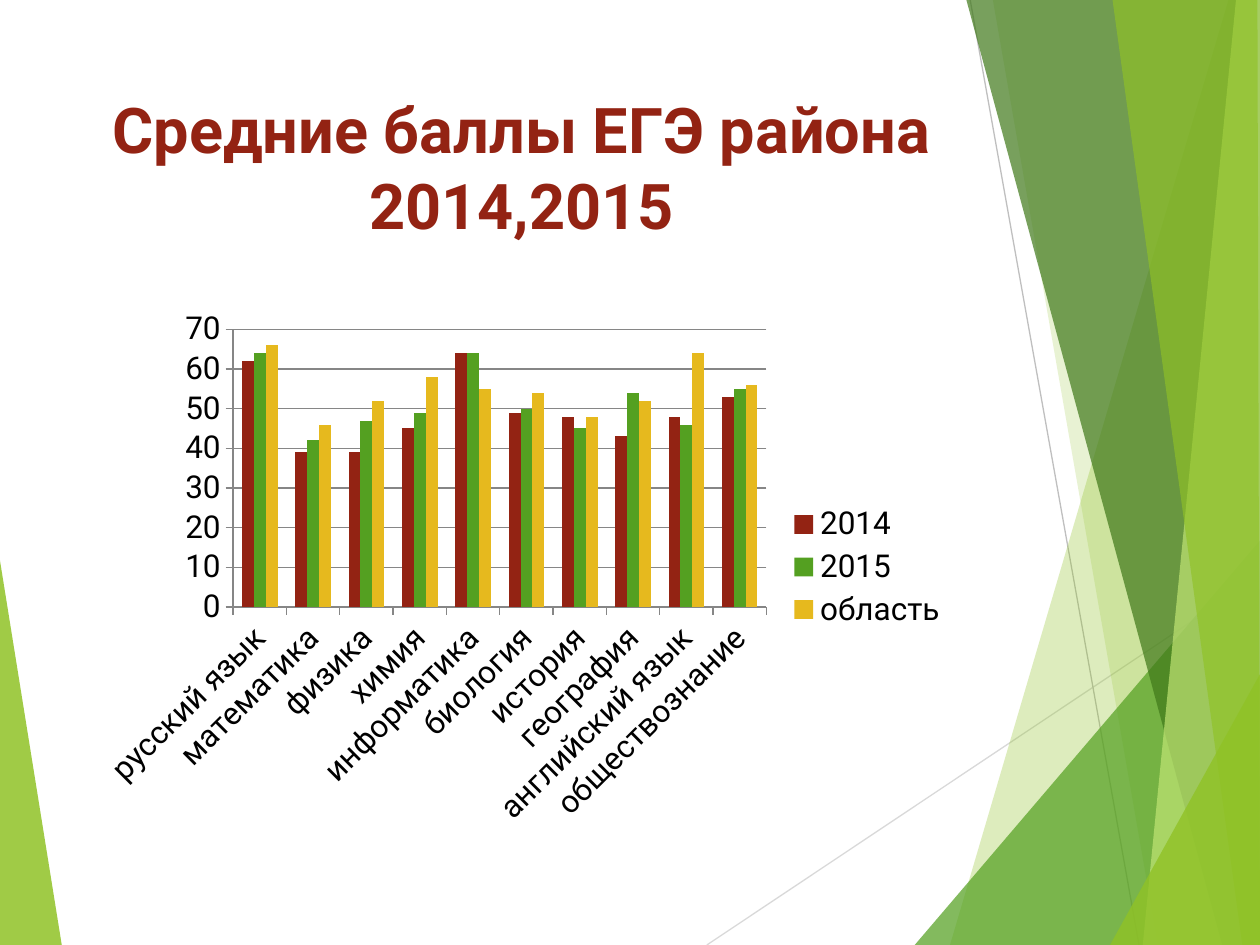
from lxml.etree import SubElement
from pptx import Presentation
from pptx.chart.data import CategoryChartData
from pptx.dml.color import RGBColor
from pptx.enum.chart import XL_CHART_TYPE as Kind, XL_LEGEND_POSITION as Side
from pptx.enum.chart import XL_TICK_MARK as Tick
from pptx.enum.shapes import MSO_CONNECTOR as Link
from pptx.enum.text import MSO_ANCHOR as Anchor, PP_ALIGN as Align
from pptx.oxml import parse_xml
from pptx.oxml.ns import nsdecls, qn
from pptx.util import Inches, Pt

# Content
FONT = "Roboto"
TITLE = "Средние баллы ЕГЭ района 2014,2015"
SUBJECTS = ["русский язык", "математика", "физика", "химия", "информатика",
            "биология", "история", "география", "английский язык",
            "обществознание"]
SERIES = [
    ("2014", "932313", [62, 39, 39, 45, 64, 49, 48, 43, 48, 53]),
    ("2015", "54A021", [64, 42, 47, 49, 64, 50, 45, 54, 46, 55]),
    ("область", "E6B91E", [66, 46, 52, 58, 55, 54, 48, 52, 64, 56]),
]

# Backdrop: colour, opacity in percent, corners
LEFT = ("90C226", 85, [(0, 4.45), (0.49, 7.5), (0, 7.5)])
RAYS = [("D9D9D9", (5.61, 7.5), (10, 4.57)),
        ("BFBFBF", (7.7, 0), (9.04, 7.5))]
SHARDS = [
    ("90C226", 30, [(9.75, 0), (7.54, 7.5), (10, 7.5), (10, 0)]),
    ("90C226", 20, [(7.88, 0), (9.19, 7.5), (10, 7.5), (10, 0)]),
    ("54A021", 72, [(7.26, 7.5), (10, 4.29), (10, 7.5)]),
    ("3F7819", 70, [(7.67, 0), (9.7, 7.5), (10, 7.5), (10, 0)]),
    ("C0E474", 70, [(9.81, 0), (9.07, 7.5), (10, 7.5), (10, 0)]),
    ("90C226", 65, [(8.83, 0), (9.86, 7.5), (10, 7.5), (9.98, 0)]),
    ("90C226", 80, [(8.81, 7.5), (10, 5.35), (10, 7.5)]),
]


def rgb(code):
    return RGBColor.from_string(code)


def paint(fill, code):
    fill.solid()
    fill.fore_color.rgb = rgb(code)


def add_shard(shapes, code, alpha, points):
    spots = [(Inches(x), Inches(y)) for x, y in points]
    pen = shapes.build_freeform(*spots[0])
    pen.add_line_segments(spots[1:], close=True)
    shard = pen.convert_to_shape()
    shard.shadow.inherit = False
    shard.line.fill.background()
    paint(shard.fill, code)
    tint = shard.fill._xPr.find(qn("a:solidFill"))[0]
    SubElement(tint, qn("a:alpha"), val=str(alpha * 1000))


def add_ray(shapes, code, start, end):
    ray = shapes.add_connector(Link.STRAIGHT, *map(Inches, start + end))
    ray.line.color.rgb = rgb(code)
    ray.line.width = Pt(0.75)
    SubElement(ray._element.spPr, qn("a:effectLst"))


def set_layout(node, x, y, w, h, inner=False):
    """Place a chart part by fractions of the chart area."""
    for old in node.findall(qn("c:layout")):
        node.remove(old)
    target = '<c:layoutTarget val="inner"/>' if inner else ""
    layout = parse_xml(
        f'<c:layout {nsdecls("c")}><c:manualLayout>{target}'
        '<c:xMode val="edge"/><c:yMode val="edge"/>'
        f'<c:x val="{x}"/><c:y val="{y}"/><c:w val="{w}"/><c:h val="{h}"/>'
        '</c:manualLayout></c:layout>')
    node.insert(0 if inner else 1, layout)


def add_scores(shapes):
    data = CategoryChartData()
    data.categories = SUBJECTS
    for name, _, scores in SERIES:
        data.add_series(name, scores)
    box = map(Inches, (0.67, 2.36, 6.94, 4.24))
    chart = shapes.add_chart(Kind.COLUMN_CLUSTERED, *box, data).chart
    chart.has_title = False
    chart.font.name, chart.font.size = FONT, Pt(18)
    chart.font.color.rgb = rgb("000000")

    # Bars
    plot = chart.plots[0]
    plot.gap_width, plot.overlap = 150, 0
    plot.vary_by_categories = False
    for bars, (_, code, _) in zip(plot.series, SERIES):
        paint(bars.format.fill, code)

    # Axes
    cats, vals = chart.category_axis, chart.value_axis
    vals.minimum_scale, vals.maximum_scale, vals.major_unit = 0, 70, 10
    vals.has_major_gridlines = True
    for axis in (cats, vals):
        axis.major_tick_mark = Tick.OUTSIDE
    for part in (cats, vals, vals.major_gridlines):
        part.format.line.color.rgb = rgb("868686")
        part.format.line.width = Pt(0.75)
    body = cats.tick_labels.font._element.getparent().getparent().getparent()
    body.find(qn("a:bodyPr")).set("rot", "-2700000")

    # Legend and plot area
    chart.has_legend = True
    legend = chart.legend
    legend.position, legend.include_in_layout = Side.RIGHT, False
    set_layout(legend._element, 0.8, 0.38, 0.19, 0.25)
    set_layout(chart._chartSpace.chart.plotArea, 0.17, 0.06, 0.61, 0.52, True)


def main():
    deck = Presentation()
    deck.slide_width, deck.slide_height = Inches(10), Inches(7.5)
    slide = deck.slides.add_slide(deck.slide_layouts[5])
    shapes = slide.shapes
    paint(slide.background.fill, "FFFFFF")

    # Backdrop
    add_shard(shapes, *LEFT)
    for ray in RAYS:
        add_ray(shapes, *ray)
    for shard in SHARDS:
        add_shard(shapes, *shard)

    # Title
    title = shapes.title
    title.left, title.top = Inches(0.67), Inches(0.67)
    title.width, title.height = Inches(6.94), Inches(1.44)
    frame = title.text_frame
    frame.text, frame.word_wrap = TITLE, True
    frame.vertical_anchor = Anchor.TOP
    line = frame.paragraphs[0]
    line.alignment = Align.CENTER
    line.font.name, line.font.size, line.font.bold = FONT, Pt(36), True
    line.font.color.rgb = rgb("932313")

    add_scores(shapes)
    deck.save("out.pptx")


if __name__ == "__main__":
    main()
